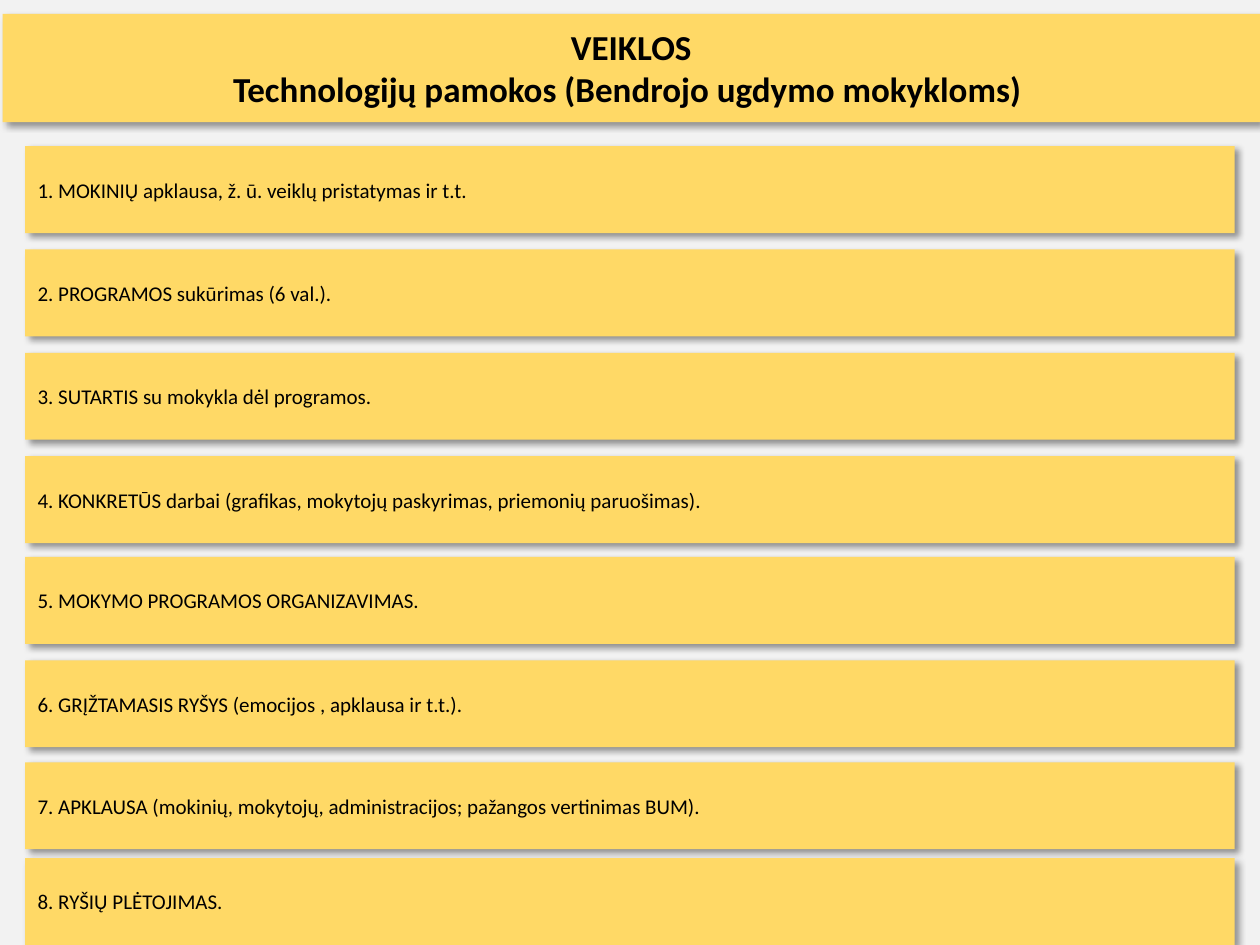
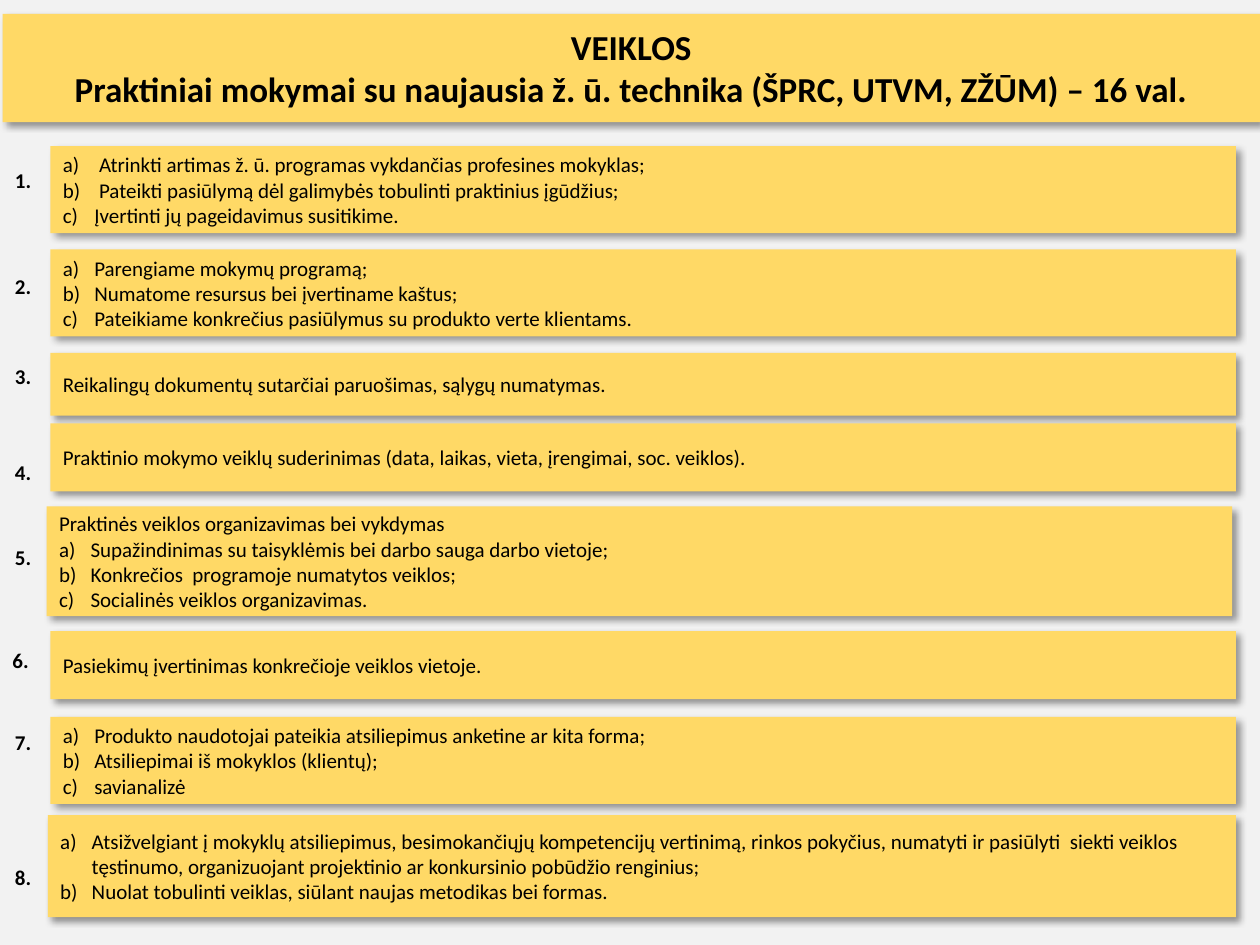
from dataclasses import dataclass

from lxml import etree
from pptx import Presentation
from pptx.dml.color import RGBColor
from pptx.enum.shapes import MSO_SHAPE
from pptx.enum.text import MSO_ANCHOR, MSO_AUTO_SIZE, PP_ALIGN
from pptx.oxml.ns import qn
from pptx.util import Inches, Pt

RECT = MSO_SHAPE.RECTANGLE
MIDDLE = MSO_ANCHOR.MIDDLE
GROW = MSO_AUTO_SIZE.SHAPE_TO_FIT_TEXT
LEFT, CENTER = PP_ALIGN.LEFT, PP_ALIGN.CENTER


@dataclass(frozen=True)
class Theme:
    back: RGBColor = RGBColor(0xF2, 0xF2, 0xF2)
    band: RGBColor = RGBColor(0xFF, 0xD9, 0x66)
    ink: RGBColor = RGBColor(0, 0, 0)
    shade: str = "000000"
    font: str = "Calibri"
    title: Pt = Pt(20)
    body: Pt = Pt(12)


theme = Theme()


def write(shape, lines, size=theme.body, bold=False, align=LEFT):
    frame = shape.text_frame
    frame.word_wrap = True
    frame.text = "\n".join(lines)
    for para in frame.paragraphs:
        para.alignment = align
        for run in para.runs:
            run.font.name = theme.font
            run.font.size = size
            run.font.bold = bold
            run.font.color.rgb = theme.ink


def add_card(slide, left, top, width, height):
    card = slide.shapes.add_shape(
        RECT, Inches(left), Inches(top), Inches(width), Inches(height))
    card.fill.solid()
    card.fill.fore_color.rgb = theme.band
    card.line.fill.background()
    card.text_frame.vertical_anchor = MIDDLE
    card.shadow.inherit = False
    effects = card._element.spPr.find(qn("a:effectLst"))
    shadow = etree.SubElement(
        effects, qn("a:outerShdw"), blurRad=str(Pt(4)), dist=str(Pt(3)),
        dir=str(45 * 60000), algn="tl", rotWithShape="0")
    color = etree.SubElement(shadow, qn("a:srgbClr"), val=theme.shade)
    etree.SubElement(color, qn("a:alpha"), val="40000")
    return card


deck = Presentation()
deck.slide_width = Inches(10)
deck.slide_height = Inches(7.5)

titles = [
    "Technologijų pamokos (Bendrojo ugdymo mokykloms) ",
    "Praktiniai mokymai su naujausia ž. ū. technika (ŠPRC, UTVM, ZŽŪM) – 16 val.",
]
slides = []
for title in titles:
    slide = deck.slides.add_slide(deck.slide_layouts[6])
    slide.background.fill.solid()
    slide.background.fill.fore_color.rgb = theme.back
    head = add_card(slide, 0.02, 0.11, 9.98, 0.86)
    write(head, ["VEIKLOS", title], theme.title, True, CENTER)
    slides.append(slide)
lessons, training = slides

steps = [
    (1.16, "MOKINIŲ apklausa, ž. ū. veiklų pristatymas ir t.t."),
    (1.98, "PROGRAMOS sukūrimas (6 val.)."),
    (2.8, "SUTARTIS su mokykla dėl programos."),
    (3.62, "KONKRETŪS darbai (grafikas, mokytojų paskyrimas, priemonių paruošimas)."),
    (4.42, "MOKYMO PROGRAMOS ORGANIZAVIMAS."),
    (5.24, "GRĮŽTAMASIS RYŠYS (emocijos , apklausa ir t.t.)."),
    (6.05, "APKLAUSA (mokinių, mokytojų, administracijos; pažangos vertinimas BUM)."),
    (6.81, "RYŠIŲ PLĖTOJIMAS."),
]
for num, (top, step) in enumerate(steps, 1):
    write(add_card(lessons, 0.2, top, 9.6, 0.69), [f"{num}. {step}"])

tasks = [
    ((0.4, 1.16, 9.41, 0.69), (0.02, 1.28), [], [
        " Atrinkti artimas ž. ū. programas vykdančias profesines mokyklas;",
        " Pateikti pasiūlymą dėl galimybės tobulinti praktinius įgūdžius;",
        "Įvertinti jų pageidavimus susitikime."]),
    ((0.4, 1.98, 9.41, 0.69), (0.02, 2.12), [], [
        "Parengiame mokymų programą;",
        "Numatome resursus bei įvertiname kaštus;",
        "Pateikiame konkrečius pasiūlymus su produkto verte klientams."]),
    ((0.4, 2.8, 9.41, 0.5), (0.02, 2.84), [
        "Reikalingų dokumentų sutarčiai paruošimas, sąlygų numatymas."], []),
    ((0.4, 3.36, 9.41, 0.54), (0.02, 3.6), [
        "Praktinio mokymo veiklų suderinimas (data, laikas, vieta, įrengimai, "
        "soc. veiklos)."], []),
    ((0.37, 4.02, 9.41, 0.87), (0.02, 4.27), [
        "Praktinės veiklos organizavimas bei vykdymas"], [
        "Supažindinimas su taisyklėmis bei darbo sauga darbo vietoje;",
        "Konkrečios  programoje numatytos veiklos;",
        "Socialinės veiklos organizavimas."]),
    ((0.4, 5.01, 9.41, 0.54), (0, 5.09), [
        "Pasiekimų įvertinimas konkrečioje veiklos vietoje."], []),
    ((0.4, 5.69, 9.41, 0.69), (0.02, 5.74), [], [
        "Produkto naudotojai pateikia atsiliepimus anketine ar kita forma;",
        "Atsiliepimai iš mokyklos (klientų);",
        "savianalizė"]),
    ((0.38, 6.47, 9.43, 0.81), (0.02, 6.81), [], [
        "Atsižvelgiant į mokyklų atsiliepimus, besimokančiųjų kompetencijų "
        "vertinimą, rinkos pokyčius, numatyti ir pasiūlyti  siekti veiklos "
        "tęstinumo, organizuojant projektinio ar konkursinio pobūdžio renginius;",
        "Nuolat tobulinti veiklas, siūlant naujas metodikas bei formas."]),
]
for num, (box, spot, intro, items) in enumerate(tasks, 1):
    card = add_card(training, *box)
    write(card, intro + items)
    for para in card.text_frame.paragraphs[len(intro):]:
        props = para._p.get_or_add_pPr()
        props.set("marL", str(Inches(0.25)))
        props.set("indent", str(-Inches(0.25)))
        etree.SubElement(props, qn("a:buFont"), typeface="+mj-lt")
        etree.SubElement(props, qn("a:buAutoNum"), type="alphaLcParenR")
    left, top = spot
    label = training.shapes.add_textbox(
        Inches(left), Inches(top), Inches(0.38), Inches(0.3))
    write(label, [f"{num}."], bold=True)
    label.text_frame.auto_size = GROW

deck.save("out.pptx")
